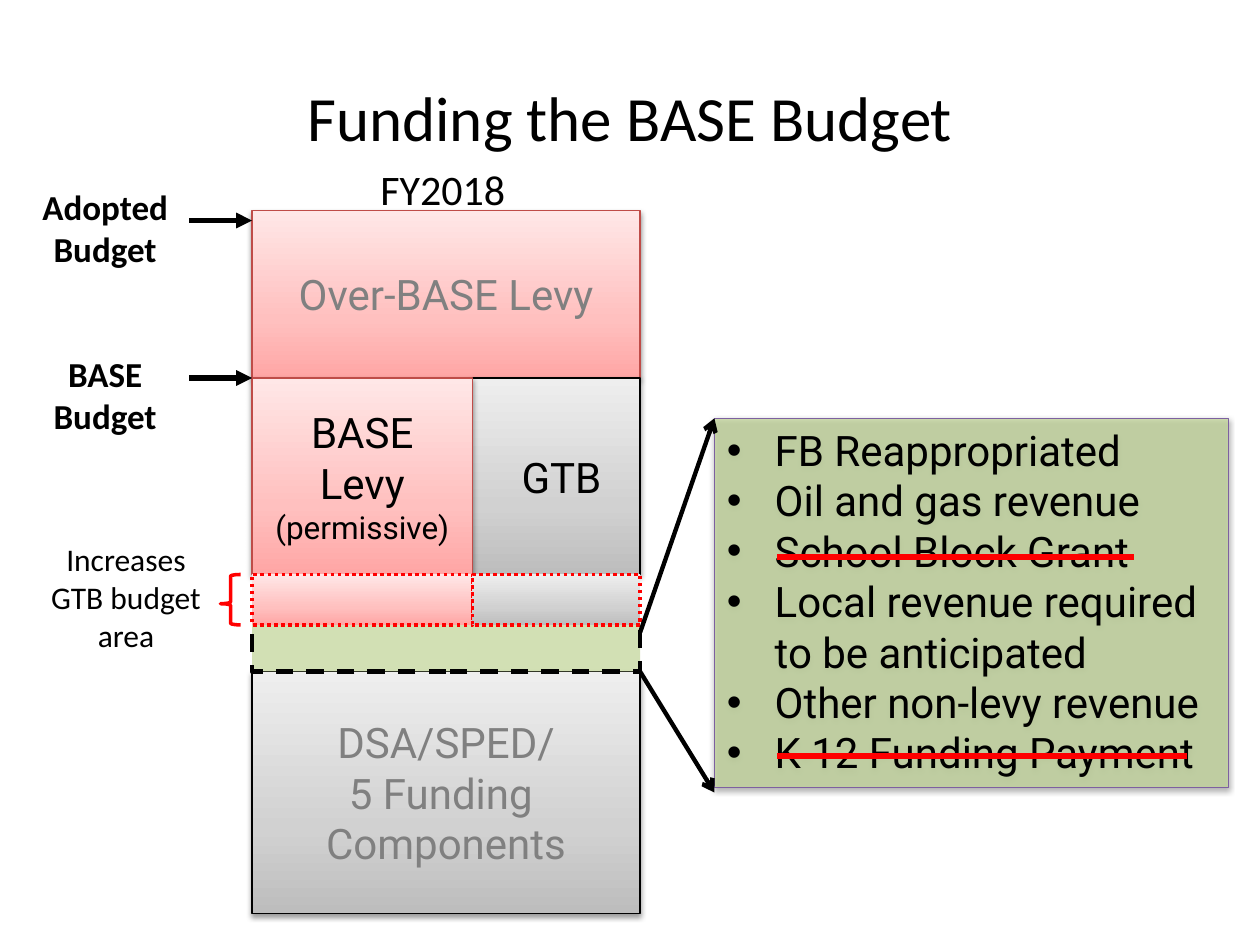
import pptx
import pptx.util
import pptx.oxml
import pptx.oxml.ns
import pptx.dml.color
import pptx.enum.dml
import pptx.enum.shapes
import pptx.enum.text
import lxml.etree

Inches, Pt = pptx.util.Inches, pptx.util.Pt
RGBColor = pptx.dml.color.RGBColor
SHAPES = pptx.enum.shapes.MSO_SHAPE
DASHES = pptx.enum.dml.MSO_LINE
ALIGN = pptx.enum.text.PP_ALIGN
ANCHOR = pptx.enum.text.MSO_ANCHOR
qn = pptx.oxml.ns.qn

BLACK = RGBColor(0x00, 0x00, 0x00)
GRAY = RGBColor(0x80, 0x80, 0x80)
RED = RGBColor(0xFF, 0x00, 0x00)
BRICK = RGBColor(0xBF, 0x4C, 0x48)
PURPLE = RGBColor(0x7D, 0x60, 0xA0)
GREEN = RGBColor(0xC3, 0xD6, 0x9B)
PINK_STOPS = (RGBColor(0xFF, 0xA6, 0xA5), RGBColor(0xFF, 0xC0, 0xBF), RGBColor(0xFF, 0xE7, 0xE7))
GRAY_STOPS = (RGBColor(0xBD, 0xBD, 0xBD), RGBColor(0xD1, 0xD1, 0xD1), RGBColor(0xEE, 0xEE, 0xEE))

# Edges of the budget column
LEFT, SPLIT, RIGHT = 2, 3.75, 5.08
TOP, BASE_TOP, STRIP_TOP, GREEN_TOP, BOTTOM_TOP, BOTTOM = 1.67, 3, 4.56, 4.93, 5.33, 7.25
STRIP_HEIGHT = 0.4


def add_child(parent, tag, **attributes):
    child = lxml.etree.SubElement(parent, qn(tag))
    for name, value in attributes.items():
        child.set(name, str(value))
    return child


def write_text(frame, text, size=24, font="Roboto", color=BLACK, bold=False,
               align=ALIGN.CENTER, anchor=ANCHOR.TOP, wrap=False, bullet=False):
    frame.word_wrap = wrap
    frame.vertical_anchor = anchor
    for index, line in enumerate(text.split("\n")):
        para = frame.paragraphs[0] if index == 0 else frame.add_paragraph()
        para.alignment = align
        span = para.add_run()
        span.text = line
        span.font.size, span.font.name, span.font.bold = Pt(size), font, bold
        span.font.color.rgb = color
        if bullet:
            properties = para._p.get_or_add_pPr()
            properties.set("marL", str(Inches(0.38)))
            properties.set("indent", str(Inches(-0.38)))
            add_child(properties, "a:buFont", typeface="Arial")
            add_child(properties, "a:buChar", char="•")


def add_label(page, text, left, top, width, height, **text_format):
    box = page.shapes.add_textbox(Inches(left), Inches(top), Inches(width), Inches(height))
    write_text(box.text_frame, text, font="Calibri", **text_format)


def fill_gradient(box, stops):
    box.fill.gradient()
    box.fill.gradient_angle = 90
    stop_list = box._element.spPr.find(qn("a:gradFill")).find(qn("a:gsLst"))
    stop_list.clear()
    for position, color in zip((0, 35000, 100000), stops):
        add_child(add_child(stop_list, "a:gs", pos=position), "a:srgbClr", val=color)


def fill_translucent(box, color):
    box.fill.solid()
    box.fill.fore_color.rgb = color
    color_node = box._element.spPr.find(qn("a:solidFill")).find(qn("a:srgbClr"))
    add_child(color_node, "a:alpha", val=75000)


def add_shadow(box):
    effects = box._element.spPr.find(qn("a:effectLst"))
    shadow = add_child(effects, "a:outerShdw", blurRad=Pt(3.1), dist=Pt(1.6),
                       dir=5400000, rotWithShape=0)
    add_child(add_child(shadow, "a:srgbClr", val=BLACK), "a:alpha", val=38000)


def add_box(page, left, top, right, bottom, line, weight=0.75, stops=None, fill=None,
            dash=None, shadow=False, shape=SHAPES.RECTANGLE):
    box = page.shapes.add_shape(shape, Inches(left), Inches(top),
                                Inches(right - left), Inches(bottom - top))
    box.shadow.inherit = False
    if stops:
        fill_gradient(box, stops)
    elif fill:
        fill_translucent(box, fill)
    else:
        box.fill.background()
    box.line.color.rgb = line
    box.line.width = Pt(weight)
    if dash:
        box.line.dash_style = dash
    if shadow:
        add_shadow(box)
    return box


def add_line(page, start, end, color=BLACK, weight=3, head=None):
    line = page.shapes.add_connector(pptx.enum.shapes.MSO_CONNECTOR.STRAIGHT,
                                     *(Inches(value) for value in start + end))
    line.line.color.rgb = color
    line.line.width = Pt(weight)
    if head:
        add_child(line.line._get_or_add_ln(), "a:tailEnd", type=head)
    add_child(line._element.spPr, "a:effectLst")


def add_budget_column(page):
    blocks = [
        (LEFT, TOP, RIGHT, BASE_TOP, BRICK, PINK_STOPS, "Over-BASE Levy", GRAY),
        (LEFT, BOTTOM_TOP, RIGHT, BOTTOM, BLACK, GRAY_STOPS,
         "DSA/SPED/\n5 Funding \nComponents", GRAY),
        (SPLIT, BASE_TOP, RIGHT, STRIP_TOP, BLACK, GRAY_STOPS, " GTB", BLACK),
        (LEFT, BASE_TOP, SPLIT, STRIP_TOP, BRICK, PINK_STOPS, "BASE\nLevy\n(permissive)", BLACK),
    ]
    for left, top, right, bottom, line, stops, text, color in blocks:
        box = add_box(page, left, top, right, bottom, line, stops=stops, shadow=True)
        write_text(box.text_frame, text, color=color, anchor=ANCHOR.MIDDLE)
        if "(permissive)" in text:
            box.text_frame.paragraphs[-1].runs[0].font.size = Pt(18)

    # Non-levy revenue band, then the dotted strips over its top edge
    add_box(page, LEFT, GREEN_TOP, RIGHT, BOTTOM_TOP, BLACK, weight=2.5, fill=GREEN,
            dash=DASHES.DASH)
    for left, right, stops in ((LEFT, SPLIT, PINK_STOPS), (SPLIT, RIGHT, GRAY_STOPS)):
        add_box(page, left, STRIP_TOP, right, STRIP_TOP + STRIP_HEIGHT, RED, weight=2,
                stops=stops, dash=DASHES.ROUND_DOT)


def add_side_labels(page):
    add_label(page, "FY2018", 2.92, 1.25, 1.25, 0.5, align=ALIGN.LEFT, wrap=True)
    add_label(page, "Adopted\nBudget", 0.23, 1.42, 1.21, 0.77, size=20, bold=True)
    add_label(page, "BASE\nBudget", 0.32, 2.75, 1.03, 0.77, size=20, bold=True)
    add_label(page, "Increases GTB budget area", 0.25, 4.24, 1.5, 1.01, size=18, wrap=True)
    for height in (1.75, BASE_TOP):
        add_line(page, (1.5, height), (LEFT, height), head="triangle")
    brace = add_box(page, 1.75, STRIP_TOP, 1.91, STRIP_TOP + STRIP_HEIGHT, RED, weight=2,
                    shape=SHAPES.LEFT_BRACE)
    brace.adjustments[0], brace.adjustments[1] = 0.08, 0.58


def add_revenue_list(page):
    box = add_box(page, 5.67, 3.32, 9.75, 6.25, PURPLE, fill=GREEN, shadow=True)
    items = ["FB Reappropriated", "Oil and gas revenue", "School Block Grant",
             "Local revenue required to be anticipated", "Other non-levy revenue",
             "K-12 Funding Payment"]
    write_text(box.text_frame, "\n".join(items), align=ALIGN.LEFT, wrap=True, bullet=True)
    # Callout arrows from the green band
    add_line(page, (RIGHT, 5.02), (5.67, 3.32), weight=2.5, head="arrow")
    add_line(page, (RIGHT, BOTTOM_TOP), (5.67, 6.29), weight=2.5, head="arrow")
    # Struck-out items
    for right, height in ((9, 4.42), (9.42, 6)):
        add_line(page, (6.17, height), (right, height), color=RED)


def main():
    deck = pptx.Presentation()
    deck.slide_width, deck.slide_height = Inches(10), Inches(7.5)
    page = deck.slides.add_slide(deck.slide_layouts[5])

    title = page.shapes.title
    title.left, title.top, title.width, title.height = map(Inches, (0.5, 0.3, 9, 1.25))
    write_text(title.text_frame, "Funding the BASE Budget", size=36, font="Calibri",
               anchor=ANCHOR.MIDDLE, wrap=True)

    add_budget_column(page)
    add_side_labels(page)
    add_revenue_list(page)
    deck.save("out.pptx")


if __name__ == "__main__":
    main()
